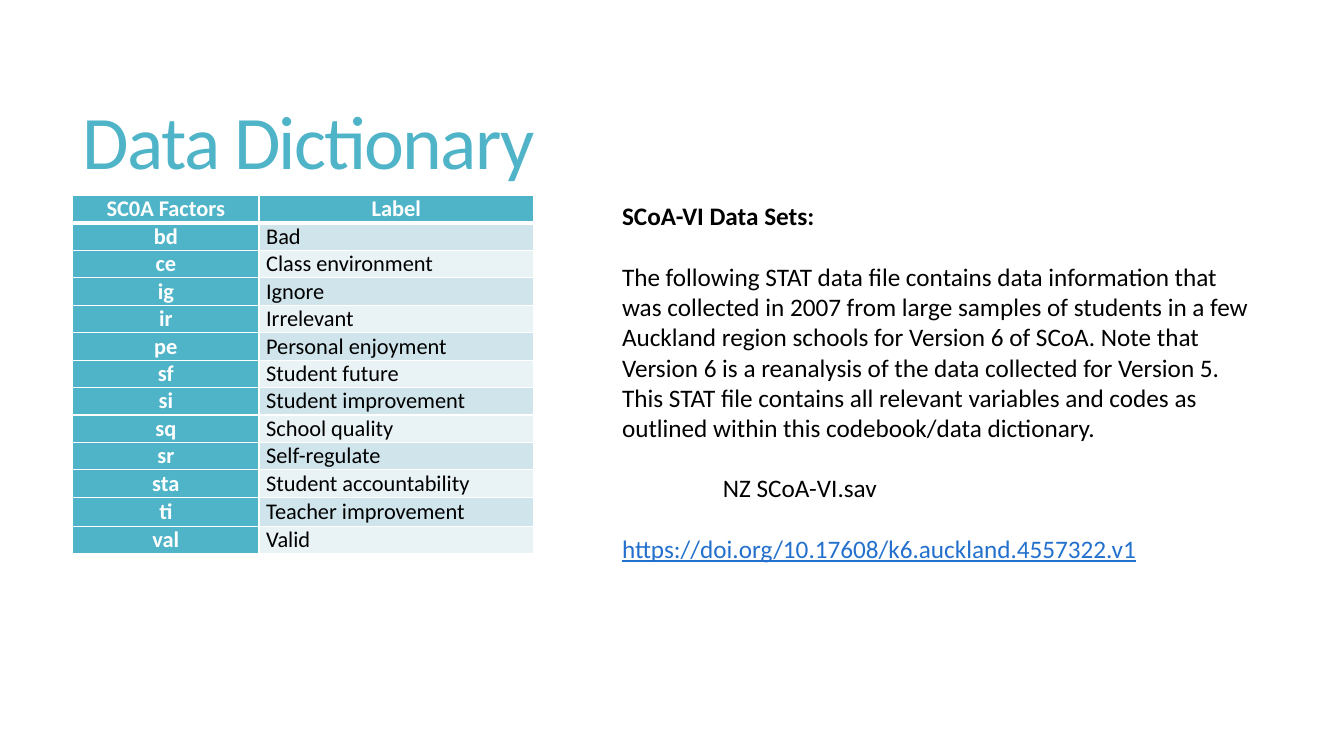
"""Build the Data Dictionary slide: a factor table beside a data set note."""
from dataclasses import dataclass

from lxml.etree import SubElement
from pptx import Presentation
from pptx.dml.color import RGBColor
from pptx.enum.text import MSO_ANCHOR, MSO_AUTO_SIZE, PP_ALIGN
from pptx.oxml.ns import qn
from pptx.util import Inches, Pt

SLIDE_WIDTH = Inches(13.33)
SLIDE_HEIGHT = Inches(7.5)
TEAL, PALE, PALER = "50B4C8", "D0E5EB", "E9F2F5"
WHITE, BLACK, LINK_BLUE = "FFFFFF", "000000", "2370CD"
COLUMN_SHARES = (13.88, 20.4)
ROW_SHARE, TALL_ROW_SHARE = 3.6, 3.87


@dataclass(frozen=True)
class Factor:
    """A table row: factor code and its label."""
    code: str
    label: str
    row_share: float = ROW_SHARE


@dataclass(frozen=True)
class Note:
    """A paragraph of the data set note."""
    wording: str
    color: str = BLACK
    bold: bool = False
    underline: bool = False
    indent: float = 0
    gap: float = 21.6


FACTORS = (
    Factor("SC0A Factors", "Label"),
    Factor("bd", "Bad"),
    Factor("ce", "Class environment"),
    Factor("ig", "Ignore"),
    Factor("ir", "Irrelevant"),
    Factor("pe", "Personal enjoyment"),
    Factor("sf", "Student future"),
    Factor("si", "Student improvement"),
    Factor("sq", "School quality"),
    Factor("sr", "Self-regulate"),
    Factor("sta", "Student accountability"),
    Factor("ti", "Teacher improvement", TALL_ROW_SHARE),
    Factor("val", "Valid"),
)

NOTES = (
    Note("SCoA-VI Data Sets:", bold=True, gap=0),
    Note("The following STAT data file contains data information that was "
         "collected in 2007 from large samples of students in a few Auckland "
         "region schools for Version 6 of SCoA. Note that Version 6 is a "
         "reanalysis of the data collected for Version 5. This STAT file "
         "contains all relevant variables and codes as outlined within this "
         "codebook/data dictionary."),
    Note("NZ SCoA-VI.sav", indent=1),
    Note("https://doi.org/10.17608/k6.auckland.4557322.v1",
         color=LINK_BLUE, underline=True),
)


def across(percent: float) -> int:
    """Return a percentage of the slide width."""
    return round(SLIDE_WIDTH * percent / 100)


def down(percent: float) -> int:
    """Return a percentage of the slide height."""
    return round(SLIDE_HEIGHT * percent / 100)


def rgb(color: str) -> RGBColor:
    """Turn a hex string into a colour."""
    return RGBColor.from_string(color)


def place(box, left: float, top: float, width: float, height: float) -> None:
    """Move a placeholder to shares of the slide."""
    box.left, box.top = across(left), down(top)
    box.width, box.height = across(width), down(height)


def style(paragraph, size: float, color: str, bold: bool = False,
          underline: bool = False) -> None:
    """Format every run of a paragraph."""
    for run in paragraph.runs:
        run.font.name = "Calibri"
        run.font.size = Pt(size)
        run.font.color.rgb = rgb(color)
        run.font.bold = bold
        run.font.underline = underline


def add_borders(cell, bottom: float) -> None:
    """Give a cell white borders with the given bottom width."""
    properties = cell._tc.get_or_add_tcPr()
    widths = {"a:lnL": 1, "a:lnR": 1, "a:lnT": 1, "a:lnB": bottom}
    for position, (tag, width) in enumerate(widths.items()):
        border = SubElement(properties, qn(tag), w=str(Pt(width)))
        fill = SubElement(border, qn("a:solidFill"))
        SubElement(fill, qn("a:srgbClr"), val=WHITE)
        properties.insert(position, border)


def fill_cell(cell, wording: str, fill: str, header: bool, keyed: bool) -> None:
    """Write one table cell, with keyed cells bold and centred."""
    cell.text_frame.text = wording
    cell.vertical_anchor = MSO_ANCHOR.MIDDLE
    cell.margin_left = cell.margin_right = Inches(0.07)
    cell.margin_top = cell.margin_bottom = 0
    cell.fill.solid()
    cell.fill.fore_color.rgb = rgb(fill)
    paragraph = cell.text_frame.paragraphs[0]
    paragraph.alignment = PP_ALIGN.CENTER if keyed else PP_ALIGN.LEFT
    style(paragraph, 16, WHITE if keyed else BLACK, bold=keyed)
    add_borders(cell, 3 if header else 1)


def add_factor_table(slide) -> None:
    """Draw the table of factors and labels."""
    height = sum(factor.row_share for factor in FACTORS)
    table = slide.shapes.add_table(
        len(FACTORS), len(COLUMN_SHARES), across(5.4), down(25.87),
        across(sum(COLUMN_SHARES)), down(height)).table
    for column, share in zip(table.columns, COLUMN_SHARES):
        column.width = across(share)
    for index, factor in enumerate(FACTORS):
        header = index == 0
        band = TEAL if header else PALE if index % 2 else PALER
        table.rows[index].height = down(factor.row_share)
        fill_cell(table.cell(index, 0), factor.code, TEAL, header, True)
        fill_cell(table.cell(index, 1), factor.label, band, header, header)


def write_title(title) -> None:
    """Place and format the slide title."""
    place(title, 5.4, 7.33, 88.37, 24.13)
    frame = title.text_frame
    frame.text = "Data Dictionary"
    frame.auto_size = MSO_AUTO_SIZE.NONE
    frame.vertical_anchor = MSO_ANCHOR.MIDDLE
    heading = frame.paragraphs[0]
    heading.alignment = PP_ALIGN.LEFT
    heading.line_spacing = 0.85
    style(heading, 54, TEAL)
    heading.runs[0]._r.get_or_add_rPr().set("spc", "-120")


def write_notes(body) -> None:
    """Place and format the data set note."""
    place(body, 45.53, 25.87, 49.13, 49.87)
    frame = body.text_frame
    frame.text = "\n".join(note.wording for note in NOTES)
    frame.auto_size = MSO_AUTO_SIZE.NONE
    frame.vertical_anchor = MSO_ANCHOR.TOP
    for paragraph, note in zip(frame.paragraphs, NOTES):
        paragraph.alignment = PP_ALIGN.LEFT
        paragraph.line_spacing = 1.0
        paragraph.space_before = Pt(note.gap)
        paragraph.space_after = Pt(0)
        properties = paragraph._p.get_or_add_pPr()
        properties.set("marL", str(Inches(note.indent)))
        properties.set("indent", "0")
        SubElement(properties, qn("a:buNone"))
        style(paragraph, 18, note.color, note.bold, note.underline)


def main() -> None:
    """Build and save the slide."""
    deck = Presentation()
    deck.slide_width, deck.slide_height = SLIDE_WIDTH, SLIDE_HEIGHT
    slide = deck.slides.add_slide(deck.slide_layouts[1])
    write_title(slide.shapes.title)
    add_factor_table(slide)
    write_notes(slide.placeholders[1])
    deck.save("out.pptx")


if __name__ == "__main__":
    main()
